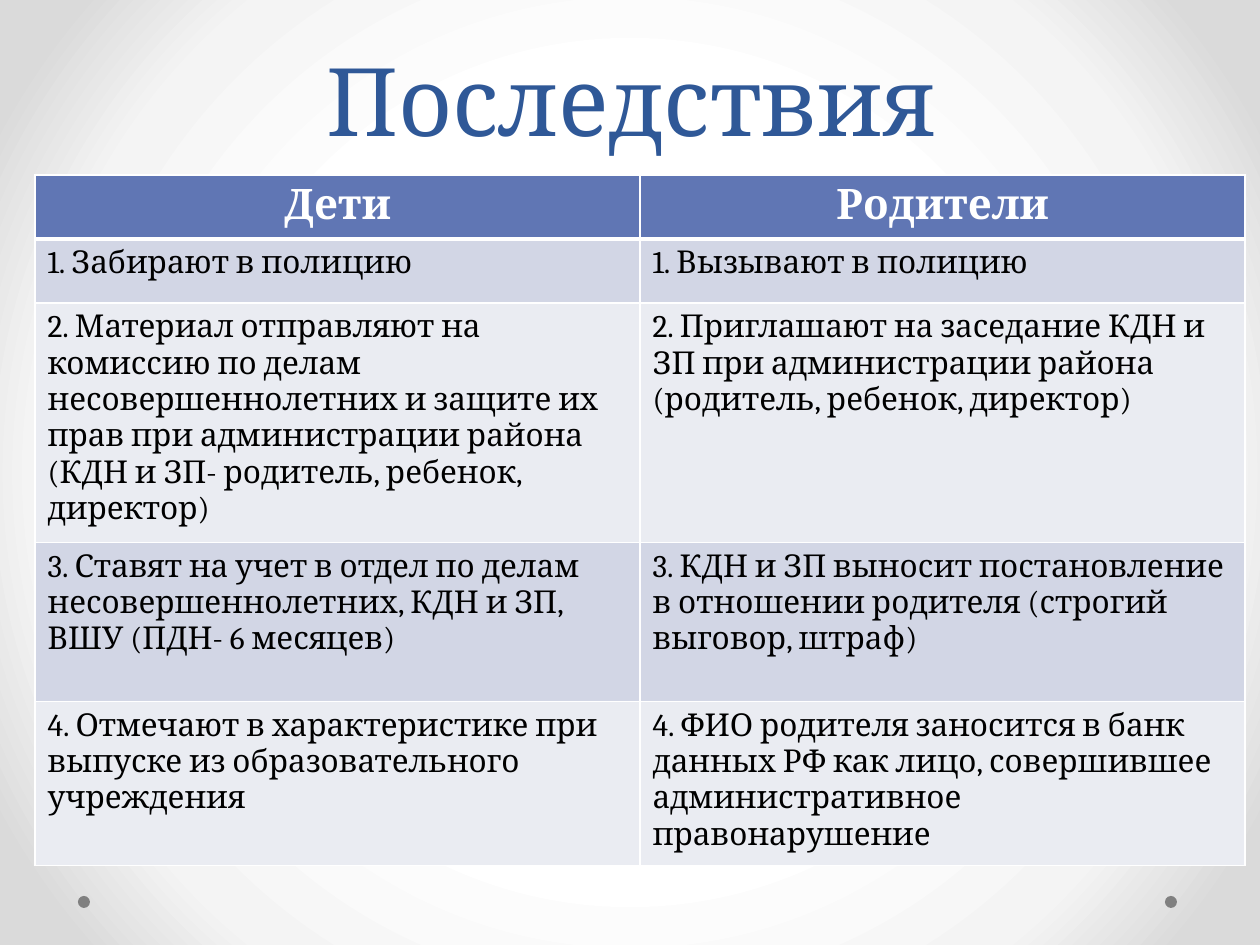
from lxml.etree import SubElement
from pptx import Presentation
from pptx.dml.color import RGBColor
from pptx.enum.shapes import MSO_SHAPE as Shape
from pptx.enum.text import MSO_ANCHOR as Anchor, PP_ALIGN as Align
from pptx.oxml import parse_xml
from pptx.oxml.ns import nsdecls, qn
from pptx.util import Pt

EMU_PER_PX = 914400 / 126
COLORS = {
    "title": "2F5897", "header": "6076B4", "odd": "D2D6E5", "even": "EAECF2",
    "white": "FFFFFF", "black": "000000", "dot": "808080",
    "glow": "F4F4F4", "edge": "DADADA",
}
FONT = "Cambria"
TITLE = {"size": Pt(54), "color": "title"}
HEADER = {"size": Pt(24), "color": "white", "bold": True}
BODY = {"size": Pt(18), "color": "black", "bold": False}

ROW_HEIGHTS = [64, 64, 237, 159, 159]
ROWS = [
    ("Дети", "Родители"),
    ("1. Забирают в полицию", "1. Вызывают в полицию"),
    ("2. Материал отправляют на комиссию по делам несовершеннолетних и защите их "
     "прав при администрации района (КДН и ЗП- родитель, ребенок, директор)",
     "2. Приглашают на заседание КДН и ЗП при администрации района "
     "(родитель, ребенок, директор)"),
    ("3. Ставят на учет в отдел по делам несовершеннолетних, КДН и ЗП, "
     "ВШУ (ПДН- 6 месяцев)",
     "3. КДН и ЗП выносит постановление в отношении родителя "
     "(строгий выговор, штраф)"),
    ("4. Отмечают в характеристике при выпуске из образовательного учреждения",
     "4. ФИО родителя заносится в банк данных РФ как лицо, совершившее "
     "административное правонарушение"),
]


def px(*lengths):
    return [round(length * EMU_PER_PX) for length in lengths]


def rgb(name):
    return RGBColor.from_string(COLORS[name])


class SlideBuilder:
    def __init__(self, slide, font):
        self.slide = slide
        self.font = font

    def background(self, stops):
        """Fill the slide with a circular gradient spreading from its centre."""
        marks = "".join(
            f'<a:gs pos="{percent * 1000}"><a:srgbClr val="{COLORS[name]}"/></a:gs>'
            for percent, name in stops)
        self.slide.element.cSld.insert(0, parse_xml(
            f'<p:bg {nsdecls("p", "a")}><p:bgPr><a:gradFill rotWithShape="1">'
            f'<a:gsLst>{marks}</a:gsLst><a:path path="circle">'
            '<a:fillToRect l="50000" t="50000" r="50000" b="50000"/></a:path>'
            '</a:gradFill><a:effectLst/></p:bgPr></p:bg>'))

    def add_text(self, frame, text, style, align):
        para = frame.paragraphs[0]
        para.alignment = align
        span = para.add_run()
        span.text = text
        span.font.name = self.font
        for key, value in style.items():
            if key == "color":
                span.font.color.rgb = rgb(value)
            else:
                setattr(span.font, key, value)
        return para

    def dot(self, left, top, size):
        dot = self.slide.shapes.add_shape(Shape.OVAL, *px(left, top, size, size))
        dot.shadow.inherit = False
        dot.fill.solid()
        dot.fill.fore_color.rgb = rgb("dot")
        dot.line.fill.background()

    def title(self, text, left, top, width, height):
        box = self.slide.shapes.add_textbox(*px(left, top, width, height))
        frame = box.text_frame
        frame.word_wrap = True
        frame.vertical_anchor = Anchor.BOTTOM
        self.add_text(frame, text, TITLE, Align.CENTER).line_spacing = Pt(58)

    def borders(self, cell, bottom):
        """Draw white cell borders, 1 pt except for the given bottom width."""
        for side, width in {"L": 1, "R": 1, "T": 1, "B": bottom}.items():
            line = SubElement(cell._tc.get_or_add_tcPr(), qn(f"a:ln{side}"), w=str(Pt(width)))
            fill = SubElement(line, qn("a:solidFill"))
            SubElement(fill, qn("a:srgbClr"), val=COLORS["white"])

    def table(self, rows, heights, left, top, width):
        frame = self.slide.shapes.add_table(
            len(rows), len(rows[0]), *px(left, top, width, sum(heights)))
        table = frame.table
        for index, (texts, height) in enumerate(zip(rows, heights)):
            table.rows[index].height = px(height)[0]
            is_header = index == 0
            color = "header" if is_header else ("even", "odd")[index % 2]
            style = HEADER if is_header else BODY
            align = Align.CENTER if is_header else Align.LEFT
            for cell, text in zip(table.rows[index].cells, texts):
                self.borders(cell, bottom=3 if is_header else 1)
                cell.fill.solid()
                cell.fill.fore_color.rgb = rgb(color)
                self.add_text(cell.text_frame, text, style, align)


def main():
    deck = Presentation()
    deck.slide_width, deck.slide_height = px(1260, 945)
    page = SlideBuilder(deck.slides.add_slide(deck.slide_layouts[6]), FONT)
    page.background([(50, "white"), (76, "glow"), (92, "edge")])
    for left in (1165, 78):
        page.dot(left, 896, 12)
    page.title("Последствия", 64, 37, 1134, 125)
    page.table(ROWS, ROW_HEIGHTS, 35, 175, 1210)
    deck.save("out.pptx")


if __name__ == "__main__":
    main()
